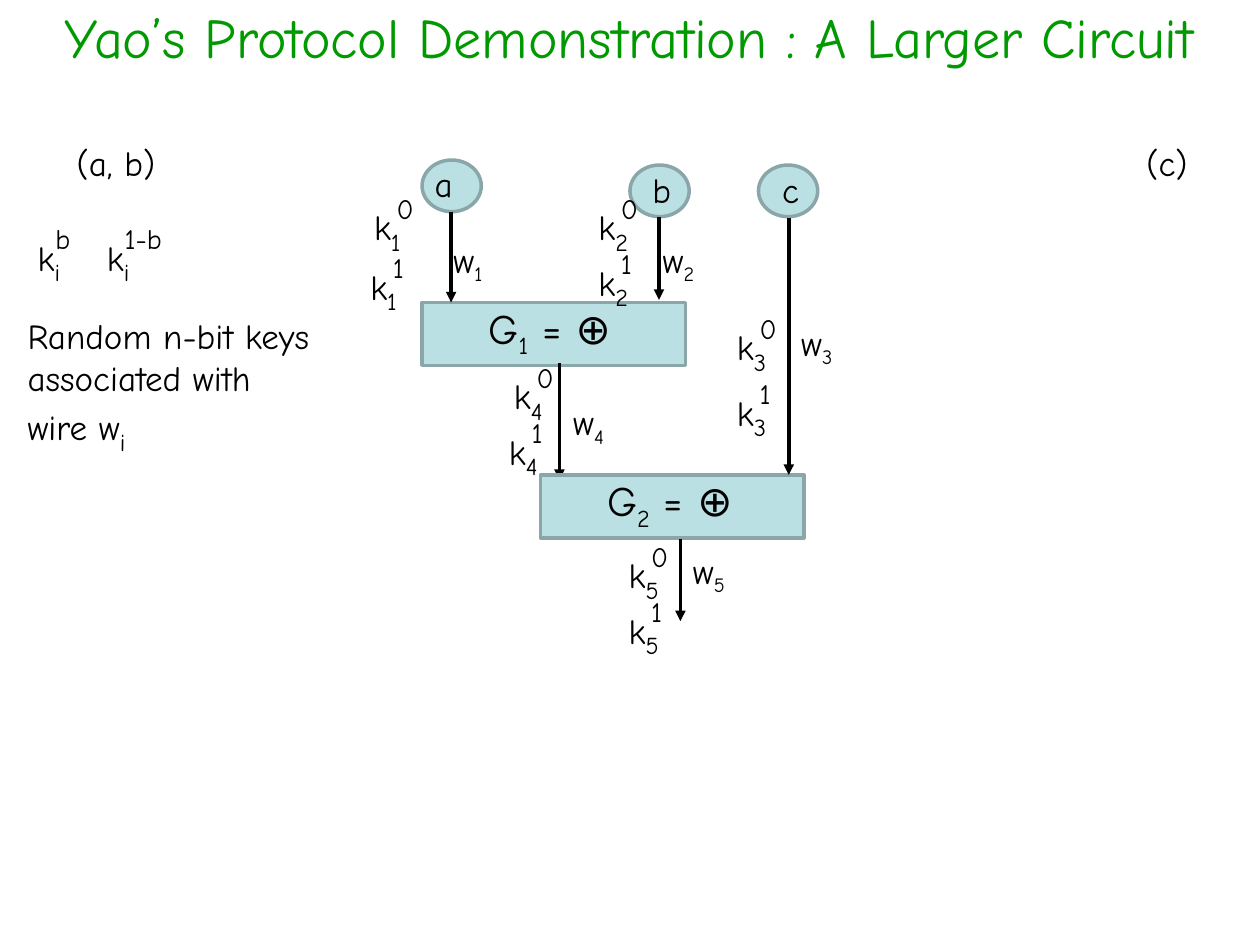
from lxml import etree
from pptx import Presentation
from pptx import util as u
from pptx.dml.color import RGBColor
from pptx.enum import shapes, text
from pptx.oxml.ns import qn

GREEN = RGBColor(0x00, 0x99, 0x00)
BLACK = RGBColor(0x00, 0x00, 0x00)
FILL = RGBColor(0xBB, 0xE0, 0xE3)
EDGE = RGBColor(0x8A, 0xA6, 0xA8)
FONT = "Comic Neue"

prs = Presentation()
prs.slide_width, prs.slide_height = u.Inches(10), u.Inches(7.5)
s = prs.slides.add_slide(prs.slide_layouts[6])


def add_label(x, y, w, h, runs, color=BLACK):
    """Add a text box; each run is (text, size) or (text, size, "sub")."""
    tb = s.shapes.add_textbox(*map(u.Inches, (x, y, w, h)))
    tf = tb.text_frame
    tf.word_wrap = True
    p = tf.paragraphs[0]
    for content, size, *sub in runs:
        r = p.add_run()
        r.text = content
        r.font.name = FONT
        r.font.size = u.Pt(size)
        r.font.color.rgb = color
        if sub:
            r.font._element.set("baseline", "-25000")
    return tf


def add_node(kind, x, y, w, h):
    sp = s.shapes.add_shape(kind, *map(u.Inches, (x, y, w, h)))
    sp.shadow.inherit = False
    sp.fill.solid()
    sp.fill.fore_color.rgb = FILL
    sp.line.color.rgb = EDGE
    sp.line.width = u.Pt(2)


# Title
tf = add_label(-0.2, -0.03, 10.39, 0.63,
               [("Yao’s Protocol Demonstration : A Larger Circuit", 32)], GREEN)
tf.vertical_anchor = text.MSO_ANCHOR.MIDDLE
tf.paragraphs[0].alignment = text.PP_ALIGN.CENTER

# Circuit inputs
for name, x, y, text_x, text_y in [("a", 3.35, 1.27, 3.35, 1.24),
                                   ("b", 5, 1.31, 5.08, 1.29),
                                   ("c", 6.02, 1.31, 6.11, 1.29)]:
    add_node(shapes.MSO_SHAPE.OVAL, x, y, 0.47, 0.41)
    add_label(text_x, text_y, 0.55, 0.44, [(name, 20)])

# Gates, each followed by the wires lying over it: x, top, bottom
gates = [("1", 3.35, 2.4, [(5.23, 1.72, 2.38), (3.58, 1.68, 2.4), (4.44, 2.88, 3.81)]),
         ("2", 4.29, 3.77, [(6.26, 1.73, 3.77), (5.4, 4.28, 4.93)])]
for number, gate_x, gate_y, wires in gates:
    add_node(shapes.MSO_SHAPE.RECTANGLE, gate_x, gate_y, 2.09, 0.5)
    add_label(gate_x + 0.43, gate_y - 0.05, 1.7, 0.5,
              [("G", 24), (number, 24, "sub"), (" = ⊕", 24)])
    for x, top, bottom in wires:
        c = s.shapes.add_connector(shapes.MSO_CONNECTOR.STRAIGHT,
                                   *map(u.Inches, (x, top, x, bottom)))
        c.line.color.rgb = BLACK
        c.line.width = u.Pt(2)
        etree.SubElement(c.line._get_or_add_ln(), qn("a:tailEnd"), type="triangle")
        etree.SubElement(c._element.spPr, qn("a:effectLst"))

# Wire names
for number, x, y in [("1", 3.5, 1.84), ("2", 5.16, 1.84), ("3", 6.26, 2.5),
                     ("4", 4.45, 3.13), ("5", 5.4, 4.31)]:
    add_label(x, y, 0.55, 0.44, [("w", 20), (number, 20, "sub")])

# Party inputs
for content, x in [("(a, b)", 0.51), ("(c)", 9)]:
    add_label(x, 1.07, 0.88, 0.44, [(content, 20)])

# Keys: subscript, superscript, position
keys = [("1", "0", 2.87, 1.53), ("1", "1", 2.84, 2),
        ("2", "0", 4.65, 1.53), ("2", "1", 4.65, 1.97),
        ("3", "0", 5.75, 2.48), ("3", "1", 5.75, 3),
        ("4", "0", 3.98, 2.87), ("4", "1", 3.94, 3.31),
        ("5", "0", 4.89, 4.29), ("5", "1", 4.89, 4.73),
        ("i", "b", 0.2, 1.77), ("i", "1-b", 0.75, 1.77)]
for sub, sup, x, y in keys:
    add_label(x, y, 0.51, 0.44, [("k", 20), (sub, 24, "sub")])
    shift = 0.14 if sub == "i" else 0.18
    width = 0.72 if sup == "1-b" else 0.25
    add_label(x + shift, y - 0.06, width, 0.37, [(sup, 16)])

# Explanation of the keys
add_label(0.12, 2.45, 2.52, 1.11,
          [("Random n-bit keys associated with wire w", 20), ("i", 24, "sub")])

prs.save("out.pptx")
